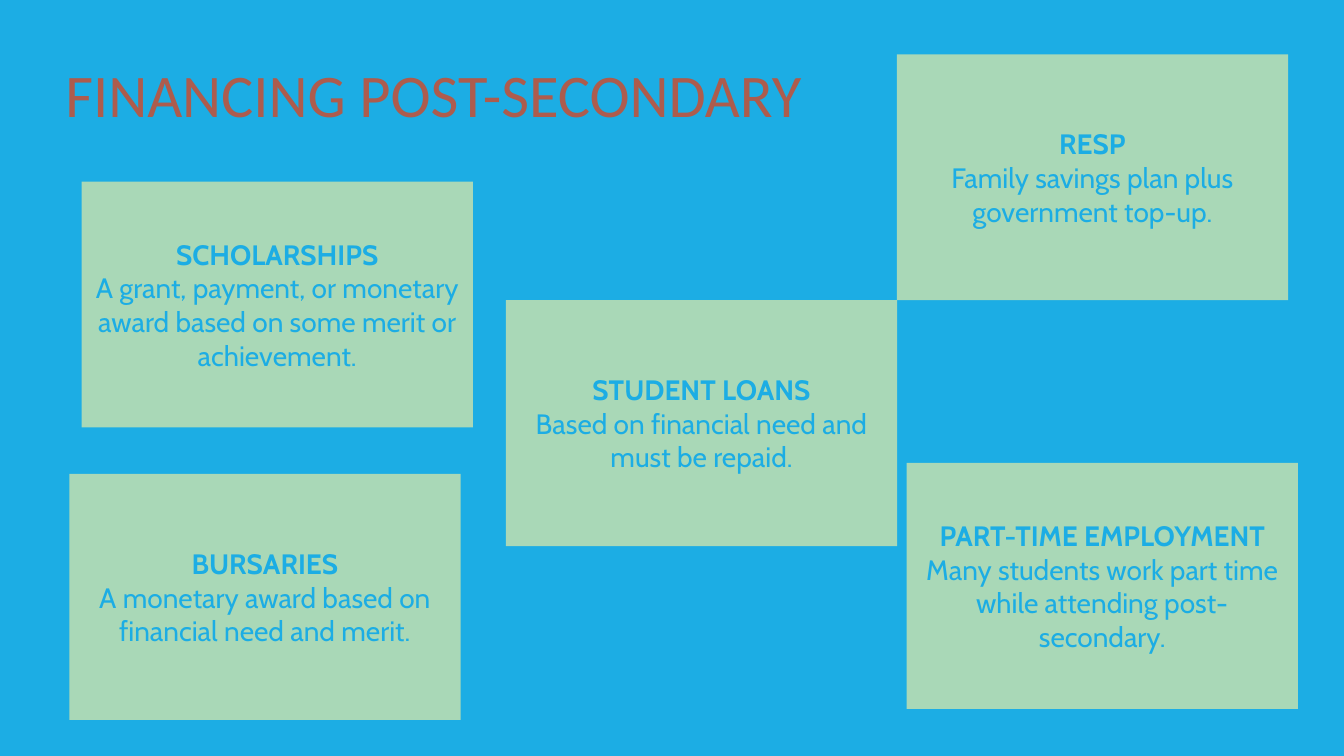
from pptx import Presentation
from pptx.dml.color import RGBColor
from pptx.enum.shapes import MSO_SHAPE
from pptx.enum.text import MSO_ANCHOR, PP_ALIGN
from pptx.util import Pt

RECTANGLE = MSO_SHAPE.RECTANGLE
MIDDLE = MSO_ANCHOR.MIDDLE
CENTER = PP_ALIGN.CENTER

BLUE = RGBColor(0x1C, 0xAD, 0xE4)
GREEN = RGBColor(0xA9, 0xD8, 0xB7)
RUST = RGBColor(0xAD, 0x5C, 0x4D)

# Content: heading, description, left and top in points
TITLE = "FINANCING POST-SECONDARY"
CARD_WIDTH, CARD_HEIGHT = 279.5, 175.7
CARDS = [
    ("RESP", "Family savings plan plus government top-up.", 640.6, 38.8),
    ("SCHOLARSHIPS",
     "A grant, payment, or monetary award based on some merit or achievement.",
     58.3, 129.7),
    ("STUDENT LOANS", "Based on financial need and must be repaid.",
     361.4, 214.4),
    ("PART-TIME EMPLOYMENT",
     "Many students work part time while attending post-secondary.",
     647.6, 330.7),
    ("BURSARIES", "A monetary award based on financial need and merit.",
     49.5, 338.6),
]


def style_font(run, name, size, color, bold=False):
    run.font.name = name
    run.font.size = Pt(size)
    run.font.color.rgb = color
    run.font.bold = bold


def add_card(slide, heading, description, left, top):
    card = slide.shapes.add_shape(RECTANGLE, Pt(left), Pt(top),
                                  Pt(CARD_WIDTH), Pt(CARD_HEIGHT))
    card.shadow.inherit = False
    card.fill.solid()
    card.fill.fore_color.rgb = GREEN
    card.line.fill.background()
    text_frame = card.text_frame
    text_frame.word_wrap = True
    text_frame.vertical_anchor = MIDDLE
    text_frame.text = f"{heading}\n{description}"
    for index, paragraph in enumerate(text_frame.paragraphs):
        paragraph.alignment = CENTER
        style_font(paragraph.runs[0], "Cabin", 20, BLUE, bold=index == 0)


def main():
    presentation = Presentation()
    presentation.slide_width, presentation.slide_height = Pt(960), Pt(540)
    slide = presentation.slides.add_slide(presentation.slide_layouts[6])
    slide.background.fill.solid()
    slide.background.fill.fore_color.rgb = BLUE

    # Cards
    for card in CARDS:
        add_card(slide, *card)

    # Title
    title = slide.shapes.add_textbox(Pt(39.6), Pt(43.2), Pt(828), Pt(53.3))
    text_frame = title.text_frame
    text_frame.word_wrap = True
    text_frame.vertical_anchor = MIDDLE
    text_frame.text = TITLE
    paragraph = text_frame.paragraphs[0]
    paragraph.line_spacing = 0.9
    style_font(paragraph.runs[0], "Calibri", 43.2, RUST)

    presentation.save("out.pptx")


if __name__ == "__main__":
    main()
